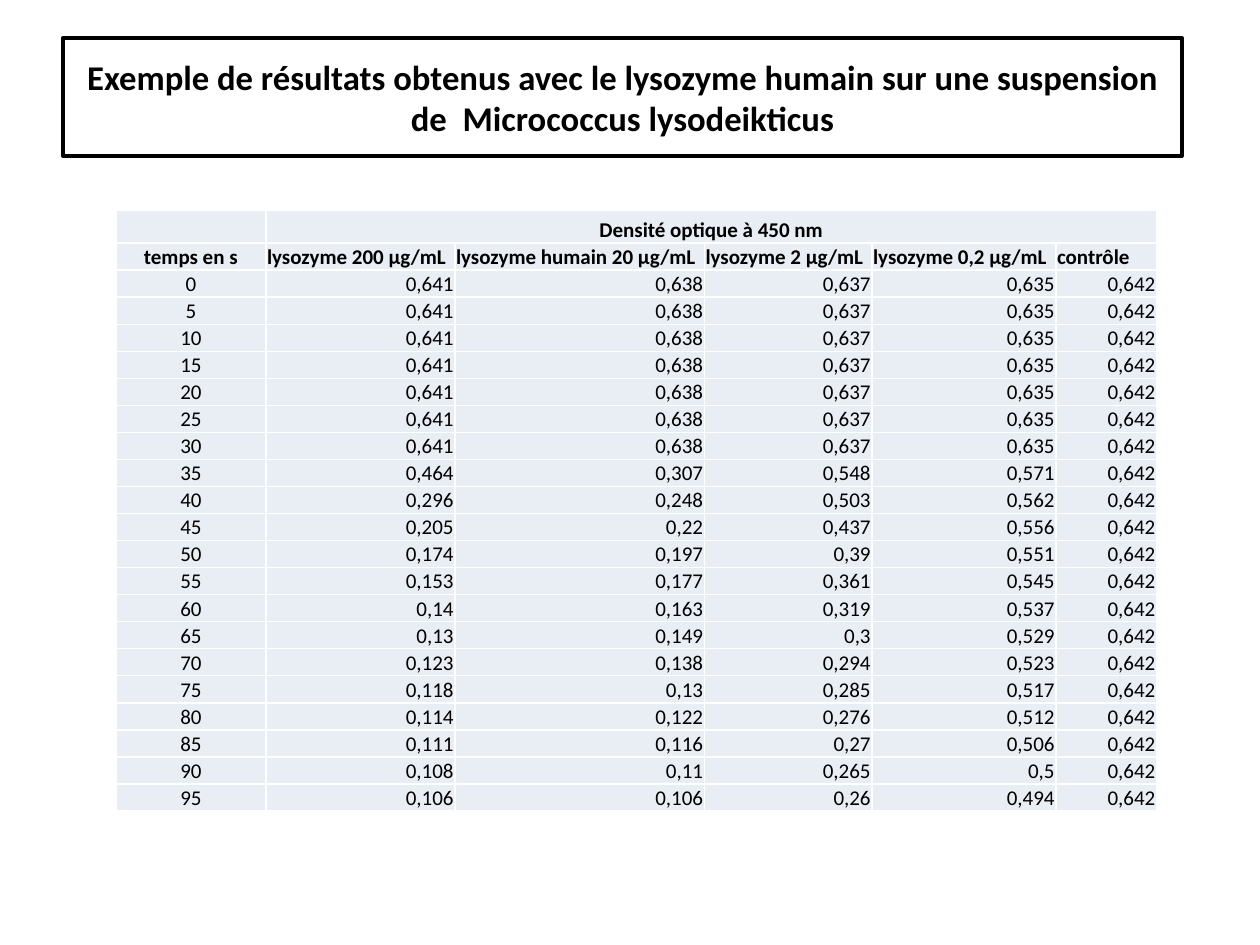
from lxml import etree
from pptx import Presentation
from pptx.dml.color import RGBColor
from pptx.enum.shapes import MSO_SHAPE
from pptx.enum.text import MSO_ANCHOR, PP_ALIGN
from pptx.oxml.ns import qn
from pptx.util import Inches, Pt

RECTANGLE = MSO_SHAPE.RECTANGLE
MIDDLE, BOTTOM = MSO_ANCHOR.MIDDLE, MSO_ANCHOR.BOTTOM
LEFT, CENTER, RIGHT = PP_ALIGN.LEFT, PP_ALIGN.CENTER, PP_ALIGN.RIGHT

COLORS = {"text": "000000", "paper": "FFFFFF", "cell": "E9EDF4"}
FONT = "Calibri"

TITLE = ("Exemple de résultats obtenus avec le lysozyme humain sur une suspension "
         "de  Micrococcus lysodeikticus")
HEADERS = ["temps en s", "lysozyme 200 µg/mL", "lysozyme humain 20 µg/mL",
           "lysozyme 2 µg/mL", "lysozyme 0,2 µg/mL", "contrôle"]
CONTROL = "0,642"
BASELINE = "0,641 0,638 0,637 0,635"
DECAY = [
    "0,464 0,307 0,548 0,571",
    "0,296 0,248 0,503 0,562",
    "0,205 0,22 0,437 0,556",
    "0,174 0,197 0,39 0,551",
    "0,153 0,177 0,361 0,545",
    "0,14 0,163 0,319 0,537",
    "0,13 0,149 0,3 0,529",
    "0,123 0,138 0,294 0,523",
    "0,118 0,13 0,285 0,517",
    "0,114 0,122 0,276 0,512",
    "0,111 0,116 0,27 0,506",
    "0,108 0,11 0,265 0,5",
    "0,106 0,106 0,26 0,494",
]
COLUMN_WIDTHS = [1.19, 1.5, 1.98, 1.33, 1.46, 0.8]
TABLE_HEIGHT, TOP_ROW_HEIGHT = 4.77, 0.26


def write(paragraph, text, size, bold, align):
    paragraph.alignment = align
    span = paragraph.add_run()
    span.text = text
    for name, value in {"name": FONT, "size": Pt(size), "bold": bold}.items():
        setattr(span.font, name, value)
    span.font.color.rgb = RGBColor.from_string(COLORS["text"])


def style_cell(cell):
    margins = {"margin_left": 0.01, "margin_right": 0.01, "margin_top": 0.01, "margin_bottom": 0}
    for name, value in margins.items():
        setattr(cell, name, Inches(value))
    properties = cell._tc.get_or_add_tcPr()
    for side in ("a:lnL", "a:lnR", "a:lnT", "a:lnB"):
        border = etree.SubElement(properties, qn(side), w=str(Pt(1)))
        fill = etree.SubElement(border, qn("a:solidFill"))
        etree.SubElement(fill, qn("a:srgbClr"), val=COLORS["paper"])
    cell.fill.solid()
    cell.fill.fore_color.rgb = RGBColor.from_string(COLORS["cell"])


deck = Presentation()
deck.slide_width, deck.slide_height = Inches(10), Inches(7.5)
page = deck.slides.add_slide(deck.slide_layouts[6])

# Framed title
box = page.shapes.add_shape(RECTANGLE, Inches(0.5), Inches(0.3), Inches(8.88), Inches(0.94))
box.shadow.inherit = False
box.fill.solid()
box.fill.fore_color.rgb = RGBColor.from_string(COLORS["paper"])
box.line.color.rgb = RGBColor.from_string(COLORS["text"])
box.line.width = Pt(2)
box.text_frame.word_wrap = True
box.text_frame.vertical_anchor = MIDDLE
write(box.text_frame.paragraphs[0], TITLE, 19.8, True, CENTER)

# Table grid
readings = [BASELINE] * 7 + DECAY
row_count = len(readings) + 2
table = page.shapes.add_table(row_count, len(HEADERS), Inches(0.92), Inches(1.67),
                              Inches(sum(COLUMN_WIDTHS)), Inches(TABLE_HEIGHT)).table
table.first_row = table.horz_banding = False
for column, width in zip(table.columns, COLUMN_WIDTHS):
    column.width = Inches(width)
for row in table.rows:
    row.height = Inches((TABLE_HEIGHT - TOP_ROW_HEIGHT) / (row_count - 1))
table.rows[0].height = Inches(TOP_ROW_HEIGHT)
for cell in table.iter_cells():
    style_cell(cell)
    cell.vertical_anchor = BOTTOM

# Top row: an empty corner, then the merged heading
for cell in table.rows[0].cells:
    etree.SubElement(cell.text_frame.paragraphs[0]._p, qn("a:endParaRPr"), sz="1200")
heading = table.cell(0, 1)
heading.merge(table.cell(0, len(HEADERS) - 1))
write(heading.text_frame.paragraphs[0], "Densité optique à 450 nm", 12, True, CENTER)

# Column names and readings, one every 5 s
rows = [HEADERS] + [[str(5 * step), *values.split(), CONTROL]
                    for step, values in enumerate(readings)]
for row_index, values in enumerate(rows, start=1):
    is_header = row_index == 1
    for column_index, value in enumerate(values):
        align = CENTER if column_index == 0 else LEFT if is_header else RIGHT
        cell = table.cell(row_index, column_index)
        write(cell.text_frame.paragraphs[0], value, 12, is_header, align)
table.cell(1, 0).vertical_anchor = MIDDLE

deck.save("out.pptx")
